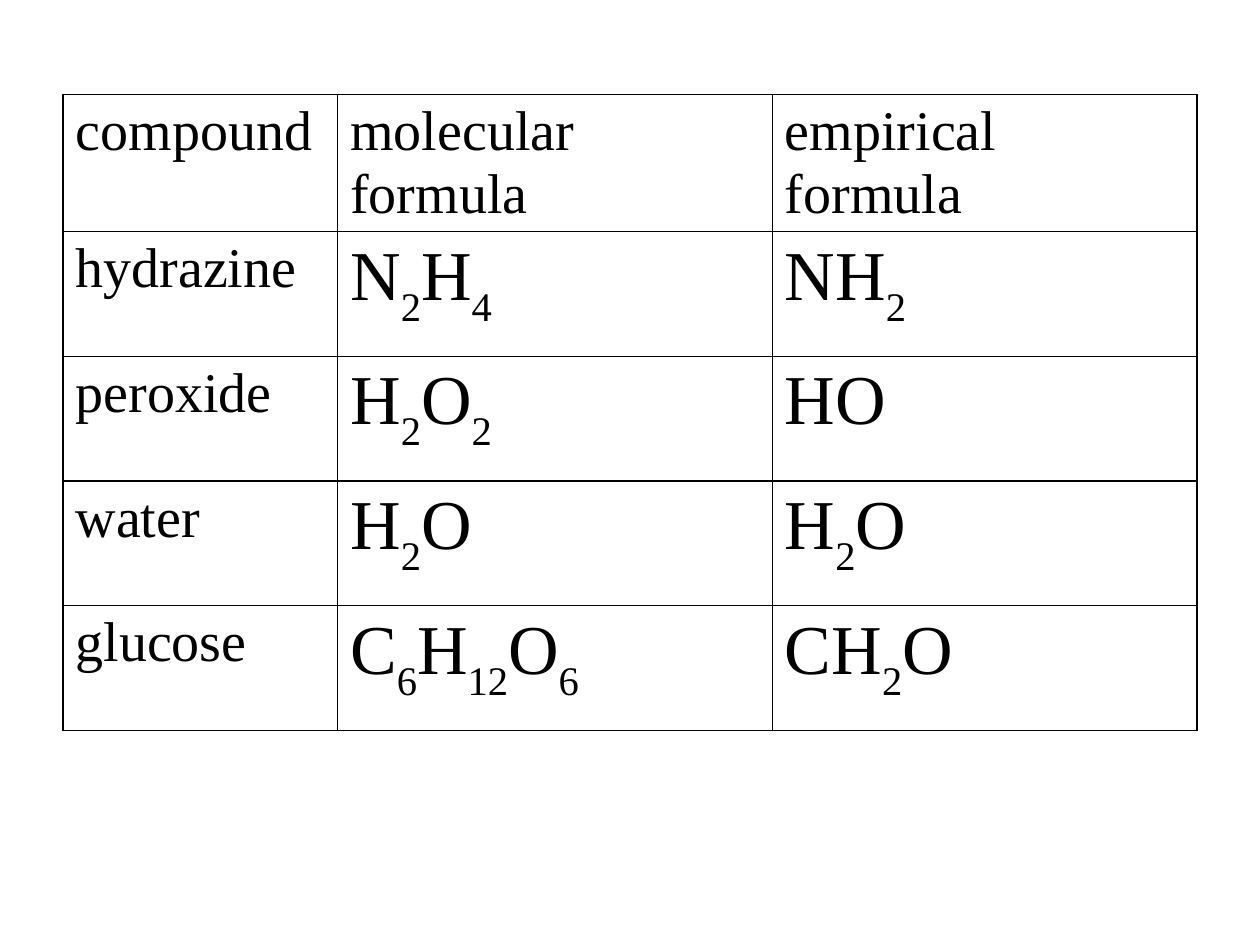
from itertools import groupby

from pptx import Presentation
from pptx.dml.color import RGBColor
from pptx.oxml import parse_xml
from pptx.oxml.ns import nsdecls
from pptx.util import Inches, Pt

# Content: the first row holds the heads, digits are set as subscripts
ROWS = [
    ("compound", "molecular formula", "empirical formula"),
    ("hydrazine", "N2H4", "NH2"),
    ("peroxide", "H2O2", "HO"),
    ("water", "H2O", "H2O"),
    ("glucose", "C6H12O6", "CH2O"),
]

# Format
BLACK = RGBColor(0, 0, 0)
FONT = "Times New Roman"
WORD, FORMULA = Pt(32), Pt(40)
WIDTHS = (2.18, 3.45, 3.37)
LEFT, TOP, HEIGHT = 0.5, 0.75, 0.99
SIDES = ("lnL", "lnR", "lnT", "lnB")


def add_text(cell, text, size):
    para = cell.text_frame.paragraphs[0]
    for digit, chars in groupby(text, str.isdigit):
        run = para.add_run()
        run.text = "".join(chars)
        for name, value in {"name": FONT, "size": size}.items():
            setattr(run.font, name, value)
        run.font.color.rgb = BLACK
        if digit:
            run.font._element.set("baseline", "-30000")


def add_border(cell):
    props = cell._tc.get_or_add_tcPr()
    for side in SIDES:
        props.append(parse_xml(
            f'<a:{side} {nsdecls("a")} w="{Pt(1)}"><a:solidFill>'
            f'<a:srgbClr val="{BLACK}"/></a:solidFill></a:{side}>'))


def main():
    deck = Presentation()
    deck.slide_width, deck.slide_height = Inches(10), Inches(7.5)
    slide = deck.slides.add_slide(deck.slide_layouts[6])

    # Table grid
    table = slide.shapes.add_table(
        len(ROWS), len(WIDTHS), Inches(LEFT), Inches(TOP),
        Inches(sum(WIDTHS)), Inches(HEIGHT * len(ROWS))).table
    for flag in ("first_row", "horz_banding"):
        setattr(table, flag, False)
    for col, width in zip(table.columns, WIDTHS):
        col.width = Inches(width)

    # Cells
    for r, row in enumerate(ROWS):
        table.rows[r].height = Inches(HEIGHT)
        for c, text in enumerate(row):
            cell = table.cell(r, c)
            add_text(cell, text, FORMULA if r and c else WORD)
            add_border(cell)
            cell.fill.background()

    deck.save("out.pptx")


if __name__ == "__main__":
    main()
